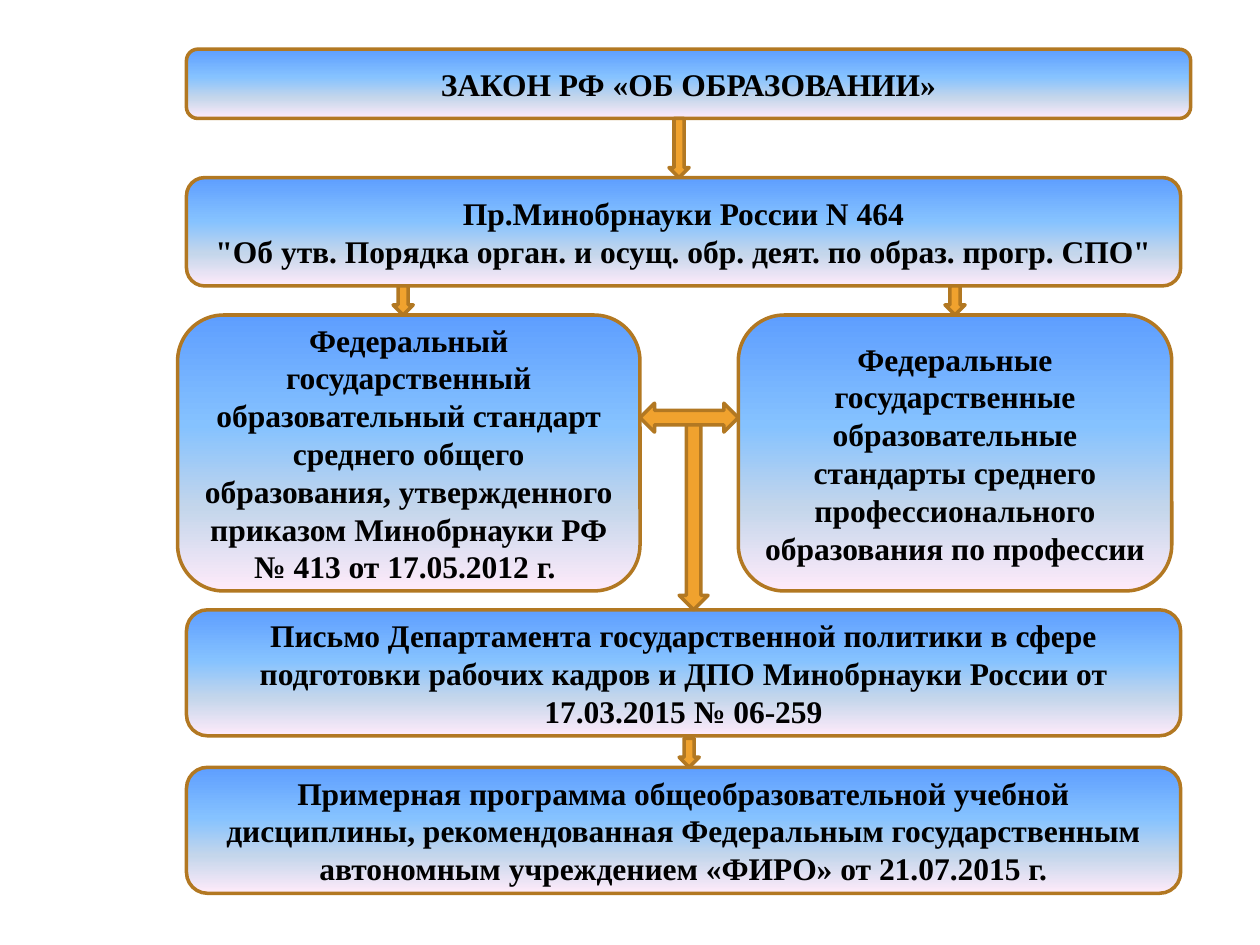
from lxml import etree
from pptx import Presentation
from pptx.dml.color import RGBColor
from pptx.enum import shapes, text
from pptx.oxml.ns import qn
from pptx.util import Inches, Pt

BLACK = RGBColor(0x00, 0x00, 0x00)
ORANGE = RGBColor(0xF0, 0xA2, 0x2E)
BROWN = RGBColor(0xB2, 0x78, 0x22)
GRADIENT = [
    (0, RGBColor(0x5E, 0x9E, 0xFF)),
    (40, RGBColor(0x85, 0xC2, 0xFF)),
    (70, RGBColor(0xC4, 0xD6, 0xEB)),
    (100, RGBColor(0xFF, 0xEB, 0xFA)),
]

LEFT, WIDTH = 1.48, 7.89
STANDARDS_TOP, STANDARDS_HEIGHT = 2.5, 2.19
SHORT_ARROW = (0.16, 0.23)

DOWN = shapes.MSO_SHAPE.DOWN_ARROW
BOTH_WAYS = shapes.MSO_SHAPE.LEFT_RIGHT_ARROW

documents = [
    (LEFT, 6.09, WIDTH, 1,
     ["Примерная программа общеобразовательной учебной дисциплины, "
      "рекомендованная Федеральным государственным автономным "
      "учреждением «ФИРО» от 21.07.2015 г."]),
    (1.41, STANDARDS_TOP, 3.67, STANDARDS_HEIGHT,
     ["Федеральный государственный образовательный стандарт среднего "
      "общего образования, утвержденного приказом Минобрнауки РФ "
      "№ 413 от 17.05.2012 г. "]),
    (5.86, STANDARDS_TOP, 3.44, STANDARDS_HEIGHT,
     ["Федеральные государственные образовательные стандарты среднего "
      "профессионального образования по профессии"]),
    (LEFT, 1.41, WIDTH, 0.86,
     ["Пр.Минобрнауки России N 464",
      '"Об утв. Порядка орган. и осущ. обр. деят. по образ. прогр. СПО"']),
    (LEFT, 4.84, WIDTH, 1,
     ["Письмо Департамента государственной политики в сфере подготовки "
      "рабочих кадров и ДПО Минобрнауки России от 17.03.2015 № 06-259"]),
    (LEFT, 0.39, 7.97, 0.55, ["ЗАКОН РФ «ОБ ОБРАЗОВАНИИ»"]),
]

arrows = [
    (DOWN, 5.31, 0.94, 0.16, 0.47),
    (DOWN, 5.39, 5.86, *SHORT_ARROW),
    (DOWN, 5.39, 3.36, 0.23, 1.48),
    (DOWN, 3.12, 2.27, *SHORT_ARROW),
    (DOWN, 7.5, 2.27, *SHORT_ARROW),
    (BOTH_WAYS, 5.08, 3.2, 0.78, 0.23),
]

prs = Presentation()
prs.slide_width, prs.slide_height = Inches(10), Inches(7.5)
slide = prs.slides.add_slide(prs.slide_layouts[6])


def add_outlined(kind, *place):
    shape = slide.shapes.add_shape(kind, *map(Inches, place))
    shape.shadow.inherit = False
    shape.line.color.rgb = BROWN
    shape.line.width = Pt(2)
    return shape


def fill_gradient(shape):
    """Fill from top to bottom with all the stops of GRADIENT."""
    shape.fill.gradient()
    shape.fill.gradient_angle = 270
    stops = shape.element.spPr.find(qn("a:gradFill")).find(qn("a:gsLst"))
    for stop in list(stops):
        stops.remove(stop)
    for percent, color in GRADIENT:
        stop = etree.SubElement(stops, qn("a:gs"), pos=str(percent * 1000))
        etree.SubElement(stop, qn("a:srgbClr"), val=str(color))


for left, top, width, height, paragraphs in documents:
    document = add_outlined(shapes.MSO_SHAPE.ROUNDED_RECTANGLE, left, top, width, height)
    fill_gradient(document)
    frame = document.text_frame
    frame.word_wrap = True
    frame.vertical_anchor = text.MSO_ANCHOR.MIDDLE
    for index, wording in enumerate(paragraphs):
        paragraph = frame.add_paragraph() if index else frame.paragraphs[0]
        paragraph.alignment = text.PP_ALIGN.CENTER
        run = paragraph.add_run()
        run.text = wording
        run.font.name = "Times New Roman"
        run.font.size = Pt(18)
        run.font.bold = True
        run.font.color.rgb = BLACK

for kind, *place in arrows:
    arrow = add_outlined(kind, *place)
    arrow.fill.solid()
    arrow.fill.fore_color.rgb = ORANGE

prs.save("out.pptx")
